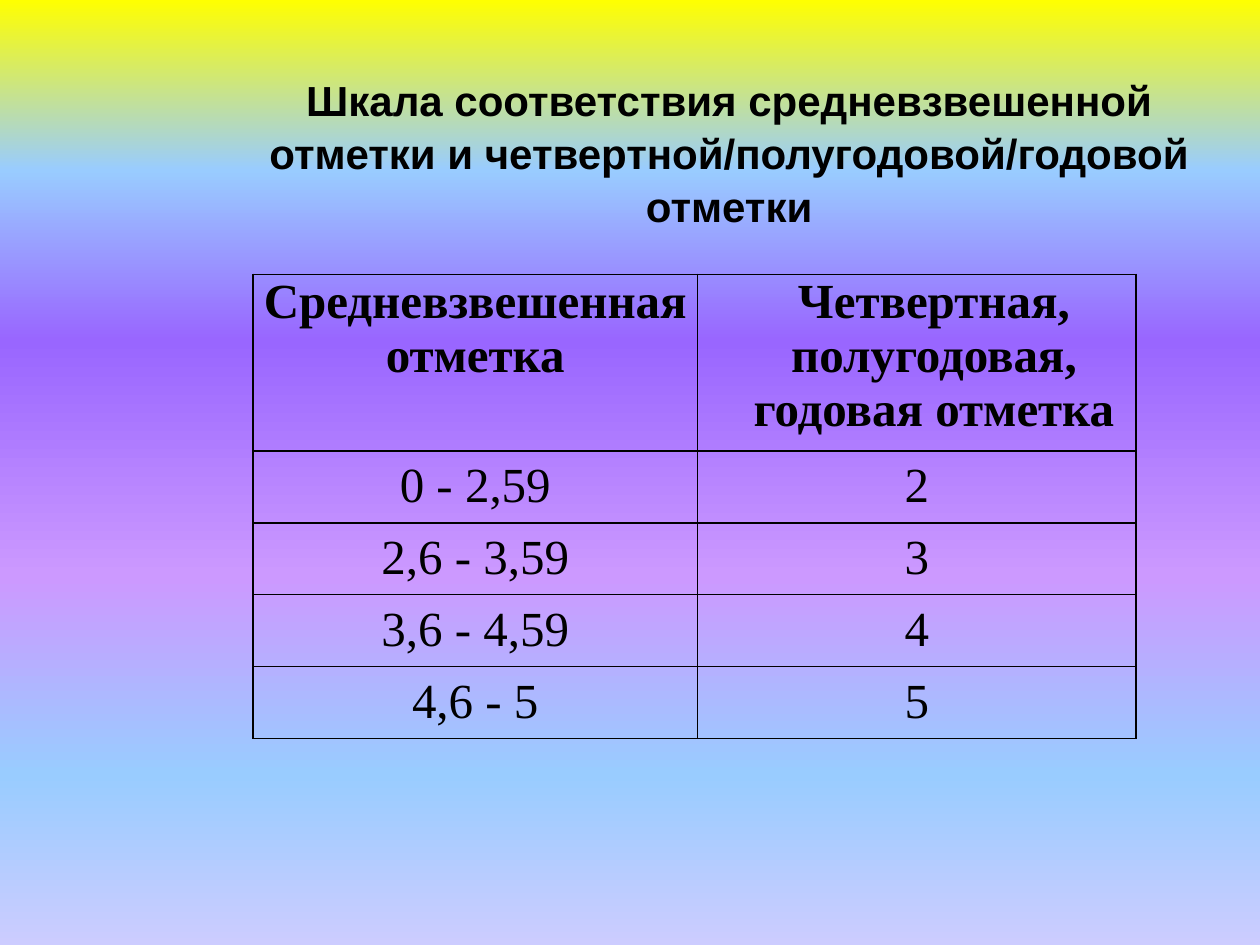
from lxml.etree import SubElement
from pptx import Presentation
from pptx.dml.color import RGBColor
from pptx.enum.text import MSO_ANCHOR, PP_ALIGN
from pptx.oxml.ns import qn
from pptx.util import Cm, Pt

COLOURS = {
    "text": "000000",
    "border": "000000",
    "yellow": "FFFF00",
    "sky": "99CCFF",
    "violet": "9966FF",
    "orchid": "CC99FF",
    "lavender": "CCCCFF",
}
BACKGROUND_STOPS = [(0, "yellow"), (18, "sky"), (36, "violet"),
                    (61, "orchid"), (82, "sky"), (100, "lavender")]
TITLE = "Шкала соответствия средневзвешенной отметки и четвертной/полугодовой/годовой отметки"
GRADES = [
    ("Средневзвешенная отметка", "Четвертная, полугодовая, годовая отметка"),
    ("0 - 2,59", "2"),
    ("2,6 - 3,59", "3"),
    ("3,6 - 4,59", "4"),
    ("4,6 - 5", "5"),
]


def add_colour(parent, name):
    SubElement(parent, qn("a:srgbClr"), val=COLOURS[name])


def paint_background(page):
    fill = page.background.fill
    fill.gradient()
    fill.gradient_angle = 270
    stop_list = next(page.element.iter(qn("a:gsLst")))
    for stop in list(stop_list):
        stop_list.remove(stop)
    for percent, name in BACKGROUND_STOPS:
        add_colour(SubElement(stop_list, qn("a:gs"), pos=str(percent * 1000)), name)


def write_centred(para, text, font, size, bold):
    para.alignment = PP_ALIGN.CENTER
    span = para.add_run()
    span.text = text
    span.font.name = font
    span.font.size = Pt(size)
    span.font.bold = bold
    span.font.color.rgb = RGBColor.from_string(COLOURS["text"])


def add_title(page, left, top, width, height):
    frame = page.shapes.add_textbox(left, top, width, height).text_frame
    frame.word_wrap = True
    frame.vertical_anchor = MSO_ANCHOR.MIDDLE
    frame.margin_bottom = Cm(1.05)
    para = frame.paragraphs[0]
    para.line_spacing = 1.05
    write_centred(para, TITLE, "Arial", 24, True)


def outline_cell(cell):
    properties = cell._tc.get_or_add_tcPr()
    for side in ("a:lnL", "a:lnR", "a:lnT", "a:lnB"):
        line = SubElement(properties, qn(side), w=str(Pt(1)))
        add_colour(SubElement(line, qn("a:solidFill")), "border")
    cell.fill.background()


def add_grade_table(page, left, top, column_widths, header_height, row_height):
    heights = [header_height] + [row_height] * (len(GRADES) - 1)
    table = page.shapes.add_table(len(GRADES), len(column_widths), left, top,
                                  sum(column_widths), sum(heights)).table
    table.first_row = table.horz_banding = False
    for column, width in zip(table.columns, column_widths):
        column.width = width
    for row_index, (row, height, texts) in enumerate(zip(table.rows, heights, GRADES)):
        row.height = height
        is_header = row_index == 0
        for column_index, (cell, text) in enumerate(zip(row.cells, texts)):
            cell.margin_left = cell.margin_right = Cm(0.08)
            cell.margin_top = cell.margin_bottom = 0
            para = cell.text_frame.paragraphs[0]
            if not is_header:
                para.line_spacing = 1.15
            elif column_index == 1:
                para._p.get_or_add_pPr().set("marL", str(Cm(0.69)))
            write_centred(para, text, "Times New Roman", 28, is_header)
            outline_cell(cell)


def main():
    deck = Presentation()
    deck.slide_width, deck.slide_height = Cm(25.4), Cm(19.05)
    page = deck.slides.add_slide(deck.slide_layouts[6])
    paint_background(page)
    add_title(page, Cm(4.7), Cm(1.93), Cm(20), Cm(3.18))
    add_grade_table(page, Cm(5.1), Cm(5.53), [Cm(8.96), Cm(8.84)], Cm(3), Cm(1.45))
    deck.save("out.pptx")


if __name__ == "__main__":
    main()
